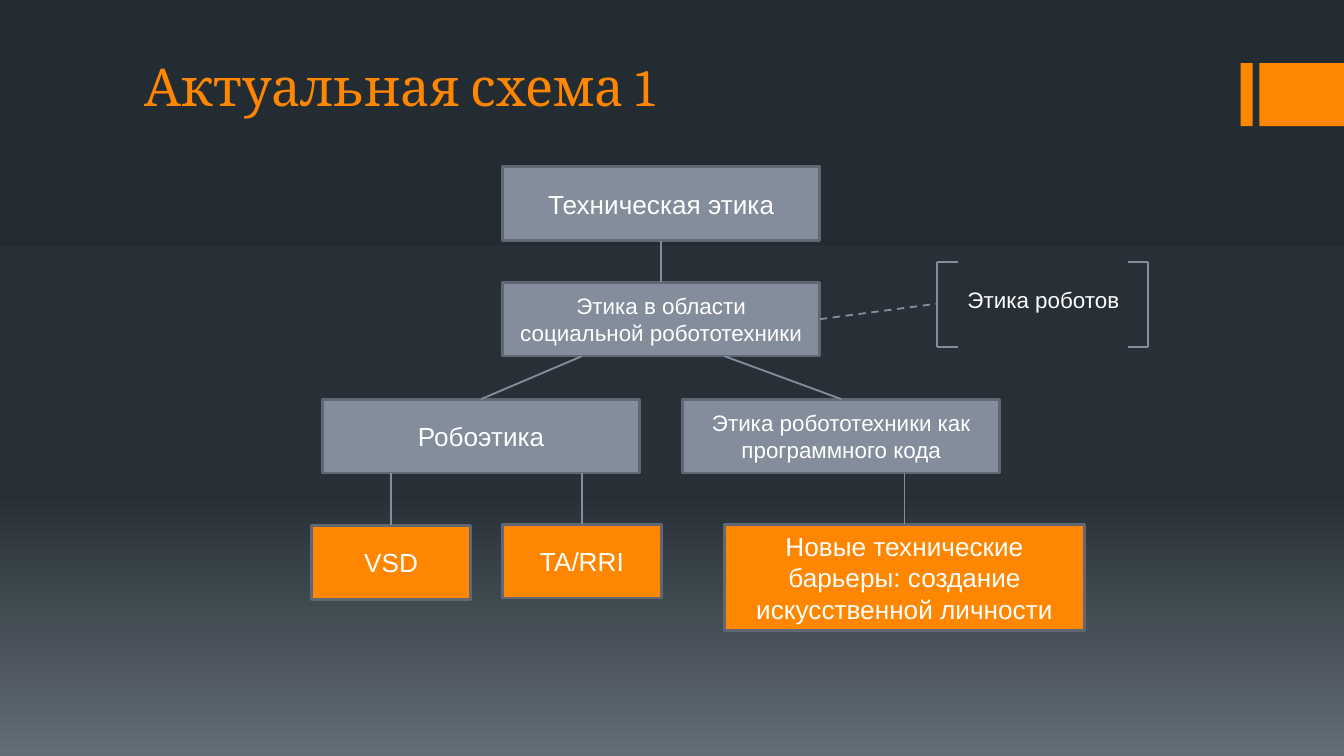
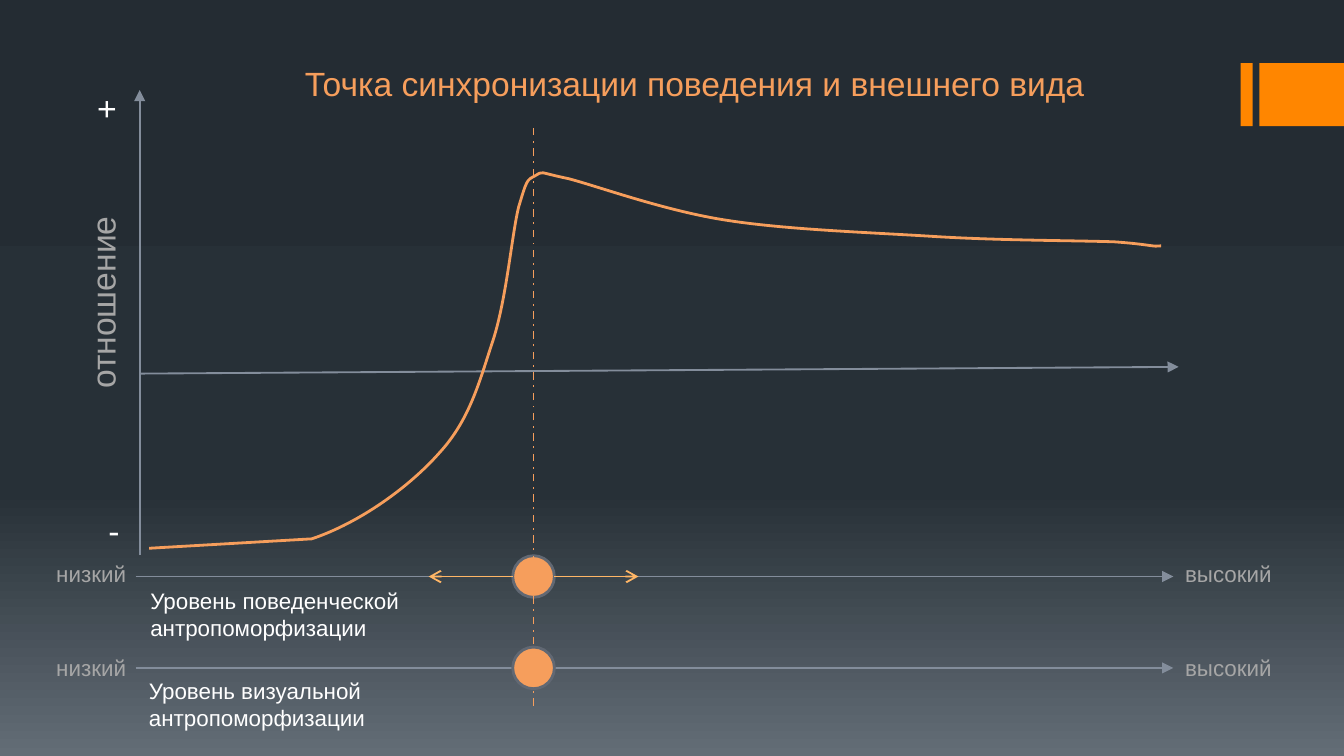
from copy import deepcopy

from lxml import etree
from pptx import Presentation
from pptx.dml.color import RGBColor
from pptx.enum.dml import MSO_LINE
from pptx.enum.shapes import MSO_CONNECTOR, MSO_SHAPE
from pptx.enum.text import MSO_ANCHOR, PP_ALIGN
from pptx.oxml.ns import qn
from pptx.util import Inches, Pt

RECTANGLE, OVAL = MSO_SHAPE.RECTANGLE, MSO_SHAPE.OVAL
STRAIGHT = MSO_CONNECTOR.STRAIGHT
DASH, DASH_DOT = MSO_LINE.DASH, MSO_LINE.DASH_DOT
TOP, MIDDLE, BOTTOM = MSO_ANCHOR.TOP, MSO_ANCHOR.MIDDLE, MSO_ANCHOR.BOTTOM
LEFT, CENTER = PP_ALIGN.LEFT, PP_ALIGN.CENTER
TOP_SITE, BOTTOM_SITE, RIGHT_SITE = 0, 2, 3

ORANGE = RGBColor(0xFF, 0x86, 0x00)
PEACH = RGBColor(0xF6, 0x9E, 0x5C)
AMBER = RGBColor(0xFF, 0xB6, 0x66)
SLATE = RGBColor(0x83, 0x8D, 0x9B)
EDGE = RGBColor(0x61, 0x68, 0x73)
SILVER = RGBColor(0xA6, 0xA6, 0xA6)
WHITE = RGBColor(0xFF, 0xFF, 0xFF)
BACKDROP = [(0, RGBColor(0x24, 0x2C, 0x33)), (0.65, RGBColor(0x27, 0x30, 0x37)),
            (1, RGBColor(0x63, 0x6D, 0x76))]
BODY_FONT, TITLE_FONT = "Arial", "Cambria"

BANDS = [(9.23, 0.09), (9.37, 0.63)]
BAND_TOP, BAND_HEIGHT = 0.47, 0.47
FIRST_BAND_ID = 101

SCHEME_TITLE = "Актуальная схема 1"
WIDE, NARROW, BOX_HEIGHT = 2.36, 1.18, 0.55
SCHEME_BOXES = {
    "technical": ("Техническая этика", 14, SLATE, (3.74, 1.24, WIDE, BOX_HEIGHT)),
    "social": ("Этика в области социальной робототехники", 12, SLATE, (3.74, 2.1, WIDE, BOX_HEIGHT)),
    "roboethics": ("Робоэтика", 14, SLATE, (2.4, 2.97, WIDE, BOX_HEIGHT)),
    "code": ("Этика робототехники как программного кода", 12, SLATE, (5.08, 2.97, WIDE, BOX_HEIGHT)),
    "vsd": ("VSD", 14, ORANGE, (2.32, 3.91, NARROW, BOX_HEIGHT)),
    "ta_rri": ("TA/RRI", 14, ORANGE, (3.74, 3.9, NARROW, BOX_HEIGHT)),
    "barriers": ("Новые технические барьеры: создание искусственной личности", 14, ORANGE,
                 (5.39, 3.9, 2.68, 0.79)),
}
BRANCHES = [("social", 4.33, "roboethics"), ("social", 5.39, "code"), ("roboethics", 2.91, "vsd"),
            ("roboethics", 4.33, "ta_rri"), ("code", 6.73, "barriers")]
BRACKETS = [(6.97, 7.13), (8.54, 8.39)]
BRACKET_TOP, BRACKET_BOTTOM = 1.95, 2.58

SYNC_TITLE = "Точка синхронизации поведения и внешнего вида"
SYNC_X, DOT = 3.97, 0.31
SCALE_START, SCALE_END = 1.01, 8.73
SCALES = [
    (4.29, 4.12, ["Уровень поведенческой", "антропоморфизации"], (1.02, 4.32, 2.07, 0.5)),
    (4.97, 4.82, ["Уровень визуальной", "антропоморфизации"], (1.01, 4.99, 1.83, 0.5)),
]
SCALE_ENDS = [("низкий", 0.32, 0.79), ("высокий", 8.72, 0.87)]
AXIS_LABELS = [
    ("отношение", SILVER, 180, (0.56, 1.59, 0.5, 1.4)),
    ("+", WHITE, 180, (0.58, 0.74, 0.5, 0.25)),
    ("-", WHITE, 270, (0.56, 3.9, 0.5, 0.19)),
]
CURVE_START, CURVE_BEND = (1.11, 4.08), (2.32, 4.01)
CURVE = [
    ((2.68, 3.89), (3.05, 3.62), (3.27, 3.37)),
    ((3.5, 3.12), (3.57, 2.83), (3.67, 2.53)),
    ((3.77, 2.22), (3.81, 1.74), (3.86, 1.54)),
    ((3.92, 1.34), (3.92, 1.34), (3.98, 1.31)),
    ((4.05, 1.27), (3.99, 1.28), (4.23, 1.33)),
    ((4.46, 1.39), (4.95, 1.57), (5.41, 1.64)),
    ((5.86, 1.71), (6.47, 1.73), (6.95, 1.76)),
    ((7.43, 1.79), (8, 1.79), (8.29, 1.8)),
    ((8.57, 1.82), (8.58, 1.84), (8.64, 1.83)),
]


def inches(values):
    return [Inches(value) for value in values]


def paint_backdrop(master):
    fill = master.background.fill
    fill.gradient()
    fill.gradient_angle = 270
    stop_list = master.element.find(".//" + qn("a:gsLst"))
    stop_list.insert(1, deepcopy(stop_list[0]))
    for stop, (position, color) in zip(fill.gradient_stops, BACKDROP):
        stop.position = position
        stop.color.rgb = color


def write(box, lines, size, color, font=BODY_FONT, align=LEFT, anchor=TOP, wrap=True):
    frame = box.text_frame
    frame.word_wrap = wrap
    frame.vertical_anchor = anchor
    frame.text = "\n".join(lines)
    for para in frame.paragraphs:
        para.alignment = align
        para.font.size = Pt(size)
        para.font.name = font
        para.font.color.rgb = color


def add_text(page, place, lines, size, color, **style):
    box = page.shapes.add_textbox(*inches(place))
    write(box, lines, size, color, **style)
    return box


def add_figure(page, kind, place, color, outlined=True):
    shape = page.shapes.add_shape(kind, *inches(place))
    shape.shadow.inherit = False
    shape.fill.solid()
    shape.fill.fore_color.rgb = color
    if outlined:
        shape.line.color.rgb = EDGE
        shape.line.width = Pt(1.5)
    else:
        shape.line.fill.background()
    return shape


def add_line(page, start, end, color=SLATE, dash=None, arrow=None):
    line = page.shapes.add_connector(STRAIGHT, *inches(start + end))
    line.line.color.rgb = color
    line.line.width = Pt(1)
    if dash:
        line.line.dash_style = dash
    if arrow:
        etree.SubElement(line.line._get_or_add_ln(), qn("a:tailEnd"), type=arrow)
    etree.SubElement(line.element.spPr, qn("a:effectLst"))
    return line


def add_page(deck):
    return deck.slides.add_slide(deck.slide_layouts[6])


def move_bands_to_master(page, master):
    shape_tree = master.element.find(".//" + qn("p:spTree"))
    for number, (left, width) in enumerate(BANDS, FIRST_BAND_ID):
        band = add_figure(page, RECTANGLE, (left, BAND_TOP, width, BAND_HEIGHT), ORANGE, outlined=False)
        band.element.find(".//" + qn("p:cNvPr")).set("id", str(number))
        shape_tree.append(band.element)


def build_scheme(page):
    add_text(page, (0.98, 0.29, 8, 0.63), [SCHEME_TITLE], 28, ORANGE, font=TITLE_FONT, anchor=BOTTOM)
    boxes = {}
    for name, (label, size, color, place) in SCHEME_BOXES.items():
        boxes[name] = add_figure(page, RECTANGLE, place, color)
        write(boxes[name], [label], size, WHITE, align=CENTER, anchor=MIDDLE)

    trunk = add_line(page, (4.92, 1.79), (4.92, 2.1))
    trunk.begin_connect(boxes["technical"], BOTTOM_SITE)
    trunk.end_connect(boxes["social"], TOP_SITE)
    for parent, start_x, child in BRANCHES:
        top, height = SCHEME_BOXES[parent][3][1::2]
        left, child_top, width, _ = SCHEME_BOXES[child][3]
        branch = add_line(page, (start_x, top + height), (left + width / 2, child_top))
        branch.end_connect(boxes[child], TOP_SITE)

    for edge, tip in BRACKETS:
        add_line(page, (edge, BRACKET_TOP), (edge, BRACKET_BOTTOM))
        for level in (BRACKET_TOP, BRACKET_BOTTOM):
            add_line(page, (edge, level), (tip, level))
    add_text(page, (7.1, 2.08, 1.42, 0.3), ["Этика роботов"], 12, WHITE)
    link = add_line(page, (6.1, 2.38), (6.97, 2.26), dash=DASH)
    link.begin_connect(boxes["social"], RIGHT_SITE)


def add_curve(page):
    builder = page.shapes.build_freeform(*inches(CURVE_START))
    ends = [CURVE_BEND] + [end for _, _, end in CURVE]
    builder.add_line_segments([inches(point) for point in ends], close=False)
    curve = builder.convert_to_shape()
    curve.shadow.inherit = False
    curve.fill.background()
    curve.line.color.rgb = PEACH
    curve.line.width = Pt(1.5)

    segments = curve.element.findall(".//" + qn("a:lnTo"))[1:]
    for segment, (first, second, _) in zip(segments, CURVE):
        segment.tag = qn("a:cubicBezTo")
        for index, (x, y) in enumerate((first, second)):
            handle = etree.Element(qn("a:pt"), x=str(Inches(x) - curve.left), y=str(Inches(y) - curve.top))
            segment.insert(index, handle)


def build_synchronization(page):
    for level, label_top, caption, place in SCALES:
        add_line(page, (SCALE_START, level), (SCALE_END, level), arrow="triangle")
        add_text(page, place, caption, 12, WHITE, wrap=False)
        add_figure(page, OVAL, (SYNC_X - DOT / 2, level - DOT / 2, DOT, DOT), PEACH)
        for label, left, width in SCALE_ENDS:
            add_text(page, (left, label_top, width, 0.3), [label], 12, SILVER)

    behaviour_level = SCALES[0][0]
    for side in (-1, 1):
        start, end = SYNC_X + side * DOT / 2, SYNC_X + side * 0.78
        add_line(page, (start, behaviour_level), (end, behaviour_level), AMBER, arrow="arrow")
    add_line(page, (SYNC_X, 5.25), (SYNC_X, 0.92), PEACH, dash=DASH_DOT)

    add_line(page, (1.04, 4.13), (1.04, 0.67), arrow="triangle")
    add_line(page, (1.04, 2.78), (8.77, 2.73), arrow="triangle")
    for label, color, turn, place in AXIS_LABELS:
        box = add_text(page, place, [label], 18, color, wrap=False)
        box.rotation = turn
        box.text_frame._txBody.bodyPr.set("vert", "eaVert")
    add_text(page, (2.17, 0.42, 6.06, 0.4), [SYNC_TITLE], 18, PEACH, wrap=False)
    add_curve(page)


def main():
    deck = Presentation()
    deck.slide_width = Inches(10)
    deck.slide_height = deck.slide_width * 9 // 16
    paint_backdrop(deck.slide_master)
    scheme = add_page(deck)
    move_bands_to_master(scheme, deck.slide_master)
    build_scheme(scheme)
    build_synchronization(add_page(deck))
    deck.save("out.pptx")


if __name__ == "__main__":
    main()
